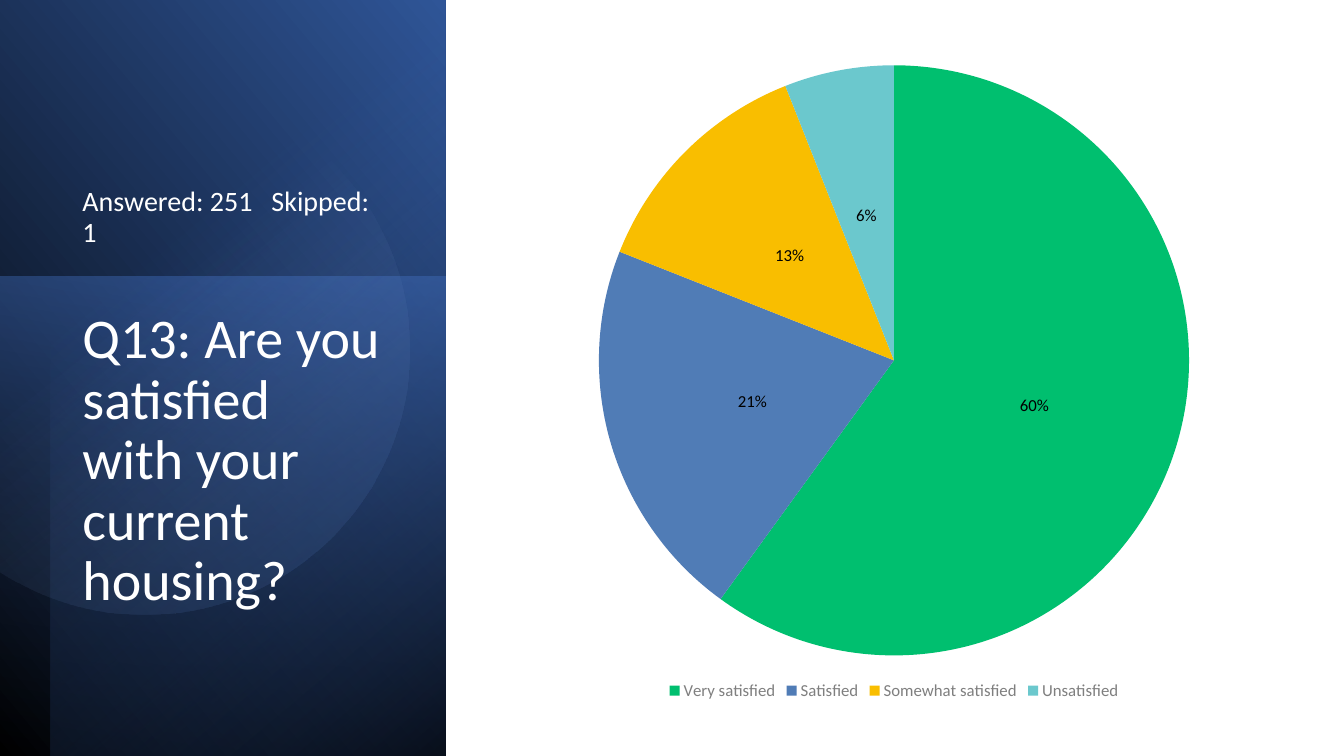
from math import acos, cos, pi, sin

from lxml.etree import SubElement
from pptx import Presentation
from pptx.chart.data import CategoryChartData
from pptx.dml.color import RGBColor
from pptx.enum.chart import XL_CHART_TYPE, XL_LABEL_POSITION, XL_LEGEND_POSITION
from pptx.enum.shapes import MSO_SHAPE
from pptx.enum.text import MSO_ANCHOR
from pptx.oxml.ns import qn
from pptx.util import Pt

FONT = "Calibri"


def rgb(code):
    return RGBColor.from_string(code)


def shade(shape, stops, angle):
    """Fill with two (position, colour, opacity) stops; angle runs clockwise."""
    shape.shadow.inherit = False
    shape.line.fill.background()
    shape.fill.gradient()
    shape.fill.gradient_angle = 360 - angle
    for stop, (place, code, alpha) in zip(shape.fill.gradient_stops, stops):
        stop.position = place / 100
        stop.color.rgb = rgb(code)
    tints = shape._element.spPr.iter(qn("a:srgbClr"))
    for tint, (place, code, alpha) in zip(tints, stops):
        SubElement(tint, qn("a:alpha")).set("val", str(alpha * 1000))


deck = Presentation()
deck.slide_width, deck.slide_height = Pt(960), Pt(540)
slide = deck.slides.add_slide(deck.slide_layouts[6])
shapes = slide.shapes

# Side panel: quarter-turned rectangles, given by the area they cover
panels = [
    (0, 0, 318.2, 541.4, 90, True, 310,
     [(0, "000000", 100), (100, "2F5597", 100)]),
    (0, 197.3, 318.2, 342.7, 270, False, 190,
     [(0, "4472C4", 50), (100, "203864", 0)]),
    (36, 0, 282.2, 540, 270, True, 220,
     [(0, "000000", 59), (69, "4472C4", 0)]),
]
for x, y, wide, high, turn, flip, angle, stops in panels:
    left, top = x + (wide - high) / 2, y + (high - wide) / 2
    panel = shapes.add_shape(MSO_SHAPE.RECTANGLE, Pt(left), Pt(top), Pt(high), Pt(wide))
    panel.rotation = turn
    if flip:
        panel._element.spPr.find(qn("a:xfrm")).set("flipH", "1")
    shade(panel, stops, angle)

# Disc cut off by the left edge of the slide
mid_x, mid_y, radius, steps = 103, 249.8, 189.4, 120
reach = pi - acos(mid_x / radius)
arc = []
for step in range(steps + 1):
    turn = reach * (2 * step / steps - 1)
    arc.append((Pt(mid_x + radius * cos(turn)), Pt(mid_y + radius * sin(turn))))
outline = shapes.build_freeform(*arc[0])
outline.add_line_segments(arc[1:], close=True)
disc = outline.convert_to_shape()
shade(disc, [(39, "8FAADC", 0), (100, "2F5597", 26)], 51.6)

# Question and response count
texts = [
    ("Q13: Are you satisfied with your current housing?",
     218.2, 226.8, 241.9, 40, 0, MSO_ANCHOR.TOP),
    ("Answered: 251   Skipped: 1", 63.4, 229.7, 117.4, 20, 10, MSO_ANCHOR.BOTTOM),
]
for words, top, wide, high, size, before, anchor in texts:
    frame = shapes.add_textbox(Pt(51.8), Pt(top), Pt(wide), Pt(high)).text_frame
    frame.word_wrap = True
    frame.vertical_anchor = anchor
    frame.text = words
    para = frame.paragraphs[0]
    para.line_spacing = 0.9
    para.space_before = Pt(before)
    font = para.runs[0].font
    font.name, font.size, font.color.rgb = FONT, Pt(size), rgb("FFFFFF")

# Pie of answers
answers = [
    ("Very satisfied", 0.6, "00BF6F"),
    ("Satisfied", 0.21, "507CB6"),
    ("Somewhat satisfied", 0.13, "F9BE00"),
    ("Unsatisfied", 0.06, "6BC8CD"),
]
data = CategoryChartData(number_format="0%")
data.categories = [name for name, share, code in answers]
data.add_series("Series 1", [share for name, share, code in answers])
chart = shapes.add_chart(
    XL_CHART_TYPE.PIE, Pt(354.2), Pt(36.7), Pt(568.8), Pt(466.6), data
).chart
chart.has_title = False
chart.font.name, chart.font.size = FONT, Pt(18)
chart.font.color.rgb = rgb("000000")

chart.has_legend = True
legend = chart.legend
legend.position = XL_LEGEND_POSITION.BOTTOM
legend.include_in_layout = False
legend.font.name, legend.font.size = FONT, Pt(12)
legend.font.color.rgb = rgb("7F7F7F")

plot = chart.plots[0]
plot.vary_by_categories = True
series = plot.series[0]
for spot, (name, share, code) in enumerate(answers):
    fill = series.points[spot].format.fill
    fill.solid()
    fill.fore_color.rgb = rgb(code)

labels = series.data_labels
labels.show_value = True
labels.number_format, labels.number_format_is_linked = "0%", False
labels.position = XL_LABEL_POSITION.CENTER
labels.font.name, labels.font.size = FONT, Pt(12)
labels.font.color.rgb = rgb("000000")

deck.save("out.pptx")
